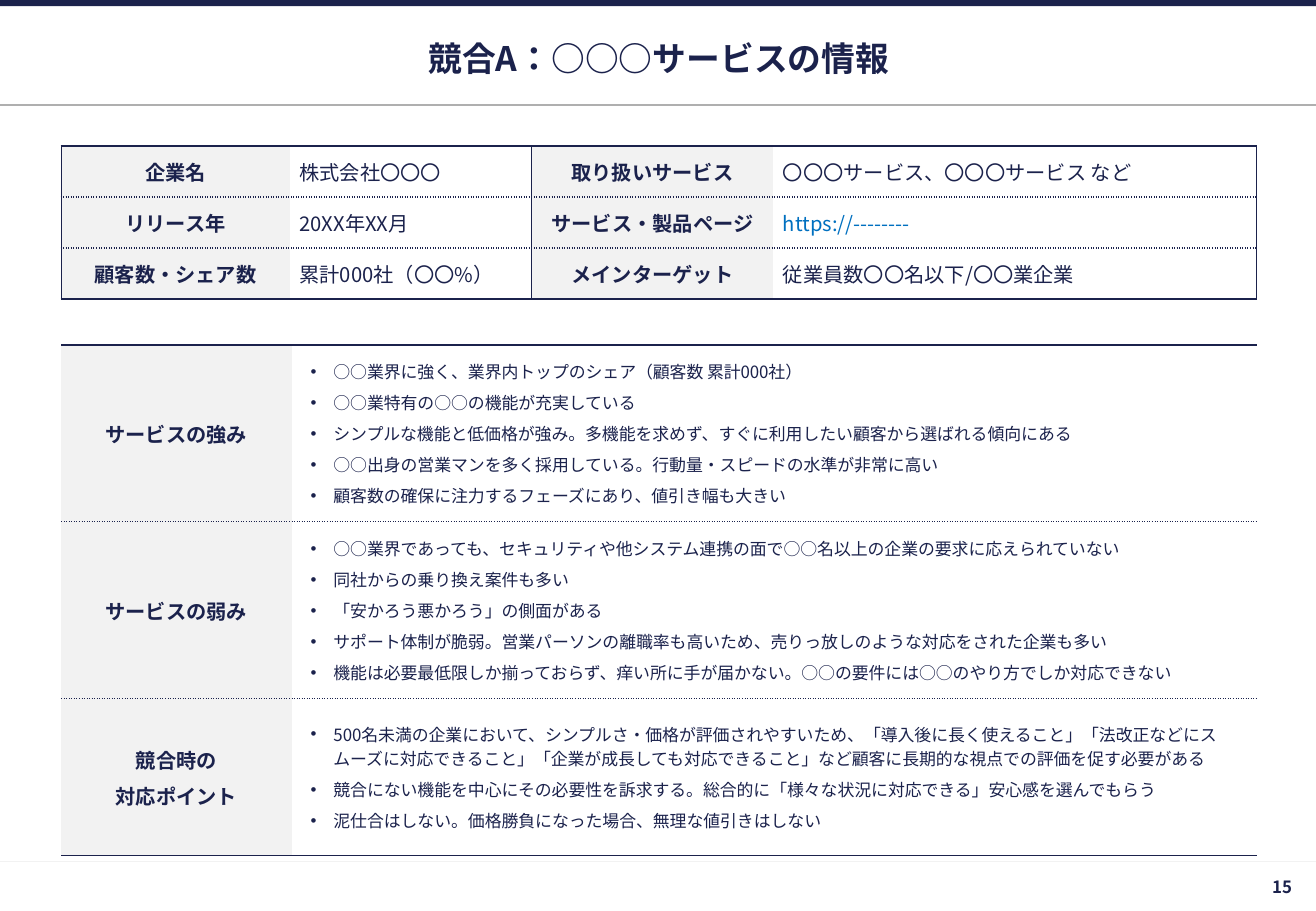
from lxml import etree
from pptx import Presentation
from pptx.dml.color import RGBColor
from pptx.enum.lang import MSO_LANGUAGE_ID
from pptx.enum.shapes import MSO_CONNECTOR, MSO_SHAPE
from pptx.enum.text import MSO_ANCHOR, PP_ALIGN
from pptx.oxml.ns import qn
from pptx.util import Pt

LEFT, MID, RIGHT = PP_ALIGN.LEFT, PP_ALIGN.CENTER, PP_ALIGN.RIGHT
CENTRE = MSO_ANCHOR.MIDDLE
RECT, STRAIGHT = MSO_SHAPE.RECTANGLE, MSO_CONNECTOR.STRAIGHT
TONGUE = MSO_LANGUAGE_ID.JAPANESE

FONT = "Noto Sans CJK JP"
NAVY, GREY, WHITE, BLUE = "1B224C", "F2F2F2", "FFFFFF", "0070C0"
WIDE, HIGH = 780, 540
EDGE = 36.3

FACTS = [
    ["企業名", "株式会社〇〇〇",
     "取り扱いサービス", "〇〇〇サービス、〇〇〇サービス など"],
    ["リリース年", "20XX年XX月", "サービス・製品ページ", "https://--------"],
    ["顧客数・シェア数", "累計000社（〇〇%）",
     "メインターゲット", "従業員数〇〇名以下/〇〇業企業"],
]
POINTS = [
    (["サービスの強み"], [
        "○○業界に強く、業界内トップのシェア（顧客数 累計000社）",
        "○○業特有の○○の機能が充実している",
        "シンプルな機能と低価格が強み。多機能を求めず、すぐに利用したい顧客から選ばれる傾向にある",
        "○○出身の営業マンを多く採用している。行動量・スピードの水準が非常に高い",
        "顧客数の確保に注力するフェーズにあり、値引き幅も大きい",
    ]),
    (["サービスの弱み"], [
        "○○業界であっても、セキュリティや他システム連携の面で○○名以上の企業の要求に応えられていない",
        "同社からの乗り換え案件も多い",
        "「安かろう悪かろう」の側面がある",
        "サポート体制が脆弱。営業パーソンの離職率も高いため、売りっ放しのような対応をされた企業も多い",
        "機能は必要最低限しか揃っておらず、痒い所に手が届かない。○○の要件には○○のやり方でしか対応できない",
    ]),
    (["競合時の", "対応ポイント"], [
        "500名未満の企業において、シンプルさ・価格が評価されやすいため、「導入後に長く使えること」"
        "「法改正などにスムーズに対応できること」「企業が成長しても対応できること」"
        "など顧客に長期的な視点での評価を促す必要がある",
        "競合にない機能を中心にその必要性を訴求する。総合的に「様々な状況に対応できる」安心感を選んでもらう",
        "泥仕合はしない。価格勝負になった場合、無理な値引きはしない",
    ]),
]


def paint(code):
    return RGBColor.from_string(code)


def add(node, tag, **attrs):
    return etree.SubElement(node, qn(tag), attrs)


def write(frame, lines, size=12, bold=False, color=NAVY, align=LEFT,
          after=0, bullet=False):
    for i, line in enumerate(lines):
        para = frame.add_paragraph() if i else frame.paragraphs[0]
        para.alignment = align
        para.space_after = Pt(after)
        if bullet:
            props = para._p.get_or_add_pPr()
            props.set("marL", str(Pt(13.5)))
            props.set("indent", str(-Pt(13.5)))
            add(add(props, "a:buClr"), "a:srgbClr", val=NAVY)
            add(props, "a:buFont", typeface="Arial")
            add(props, "a:buChar", char="•")
        run = para.add_run()
        run.text = line
        font = run.font
        font.size, font.bold, font.name = Pt(size), bold, FONT
        font.language_id = TONGUE
        font.color.rgb = paint(color)
        add(run._r.get_or_add_rPr(), "a:ea", typeface=FONT)


def add_label(slide, text, x, y, w, h, pads, **form):
    frame = slide.shapes.add_textbox(Pt(x), Pt(y), Pt(w), Pt(h)).text_frame
    frame.word_wrap = True
    frame.vertical_anchor = CENTRE
    set_pads(frame, pads)
    write(frame, [text], **form)


def set_pads(item, pads):
    (item.margin_left, item.margin_top,
     item.margin_right, item.margin_bottom) = map(Pt, pads)


def add_rule(slide, y, color):
    rule = slide.shapes.add_connector(STRAIGHT, 0, Pt(y), Pt(WIDE), Pt(y))
    rule.line.color.rgb = paint(color)
    rule.line.width = Pt(0.75)
    add(rule._element.spPr, "a:effectLst")


def add_grid(slide, y, cols, rows):
    frame = slide.shapes.add_table(len(rows), len(cols), Pt(EDGE), Pt(y),
                                   Pt(sum(cols)), Pt(sum(rows)))
    table = frame.table
    table.first_row = table.horz_banding = False
    for col, width in zip(table.columns, cols):
        col.width = Pt(width)
    for row, high in zip(table.rows, rows):
        row.height = Pt(high)
    return table


def set_cell(cell, lines, fill, edges, pads, **form):
    """Fill a cell; edges maps a side (L, R, T, B) to its dash."""
    props = cell._tc.get_or_add_tcPr()
    for side in "LRTB":
        line = add(props, f"a:ln{side}", w=str(Pt(1)))
        if side in edges:
            add(add(line, "a:solidFill"), "a:srgbClr", val=NAVY)
            add(line, "a:prstDash", val=edges[side])
        else:
            add(line, "a:noFill")
    cell.fill.solid()
    cell.fill.fore_color.rgb = paint(fill)
    cell.vertical_anchor = CENTRE
    set_pads(cell, pads)
    write(cell.text_frame, lines, **form)


def row_edges(r, count):
    """Solid at the outer edges, dotted between rows."""
    return {"T": "sysDot" if r else "solid",
            "B": "sysDot" if r < count - 1 else "solid"}


def add_facts(slide):
    table = add_grid(slide, 86.6, [135.5, 143.3, 143.3, 286.4],
                     [30.25] * len(FACTS))
    for r, row in enumerate(FACTS):
        for c, text in enumerate(row):
            head = c % 2 == 0
            edges = row_edges(r, len(FACTS))
            edges["L" if head else "R"] = "solid"
            set_cell(table.cell(r, c), [text], GREY if head else WHITE,
                     edges, [5.67] * 4, bold=head,
                     align=MID if head else LEFT,
                     color=BLUE if text.startswith("https") else NAVY)


def add_points(slide):
    table = add_grid(slide, 204.4, [136.5, 572], [104.9, 104.9, 93.1])
    for r, (head, items) in enumerate(POINTS):
        edges = row_edges(r, len(POINTS))
        set_cell(table.cell(r, 0), head, GREY, edges, [5.67] * 4,
                 bold=True, align=MID, after=4)
        set_cell(table.cell(r, 1), items, WHITE, edges,
                 [11.34, 8.5, 8.5, 8.5], size=10, after=4, bullet=True)


def main():
    deck = Presentation()
    deck.slide_width, deck.slide_height = Pt(WIDE), Pt(HIGH)
    slide = deck.slides.add_slide(deck.slide_layouts[6])

    # Page frame
    add_rule(slide, 510.5, GREY)
    bar = slide.shapes.add_shape(RECT, 0, 0, Pt(WIDE), Pt(3.6))
    bar.shadow.inherit = False
    bar.fill.solid()
    bar.fill.fore_color.rgb = paint(NAVY)
    bar.line.fill.background()
    add_rule(slide, 62.2, "AFAFAF")

    # Title and page number
    add_label(slide, "競合A：○○○サービスの情報", EDGE, 18.7, 708.5, 31,
              [0] * 4, size=20, bold=True, align=MID)
    add_label(slide, "15", 640.5, 511, 139.5, 29,
              [2.8, 2.8, 14.2, 2.8], size=10, bold=True, align=RIGHT)

    # Tables
    add_facts(slide)
    add_points(slide)
    deck.save("out.pptx")


if __name__ == "__main__":
    main()
